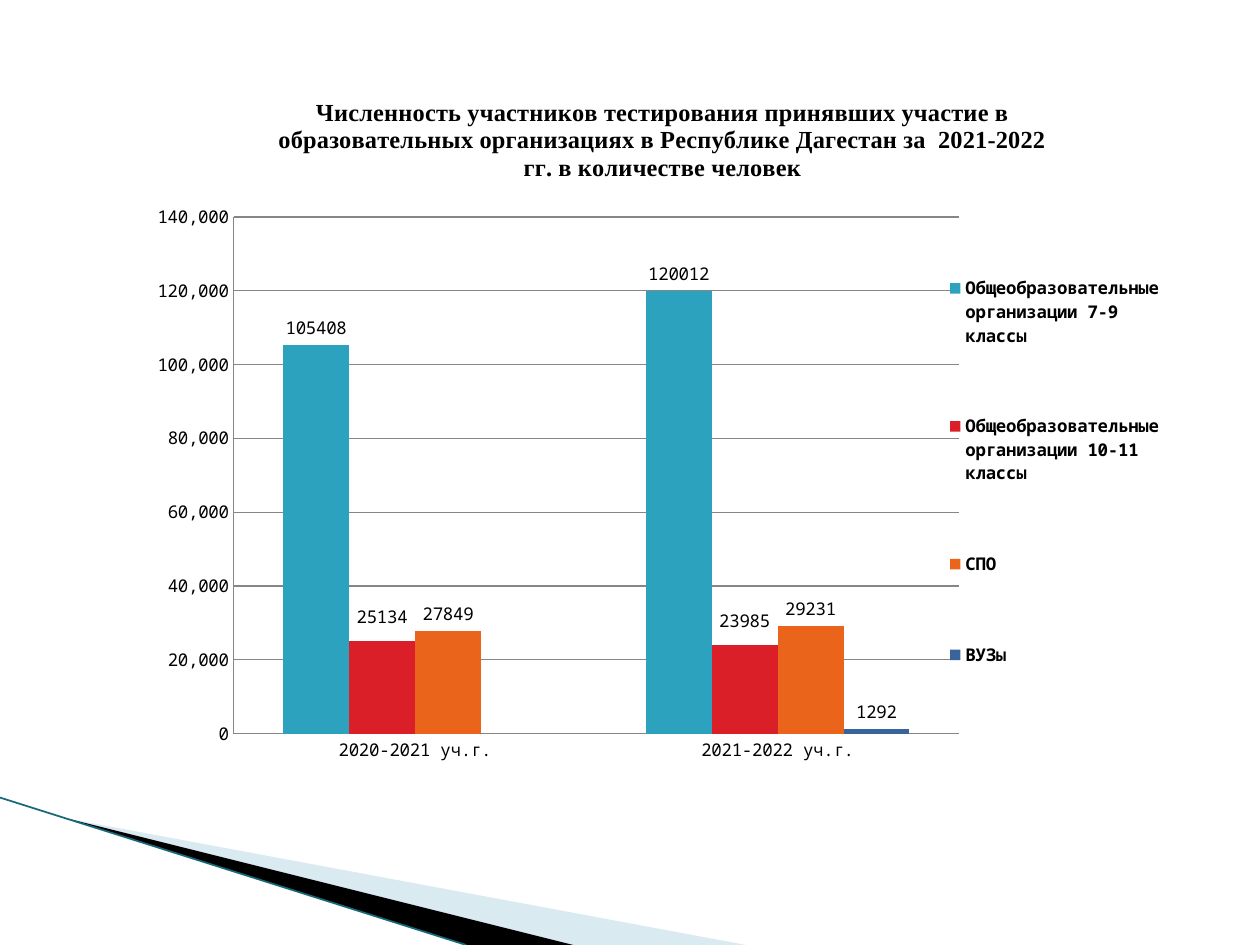
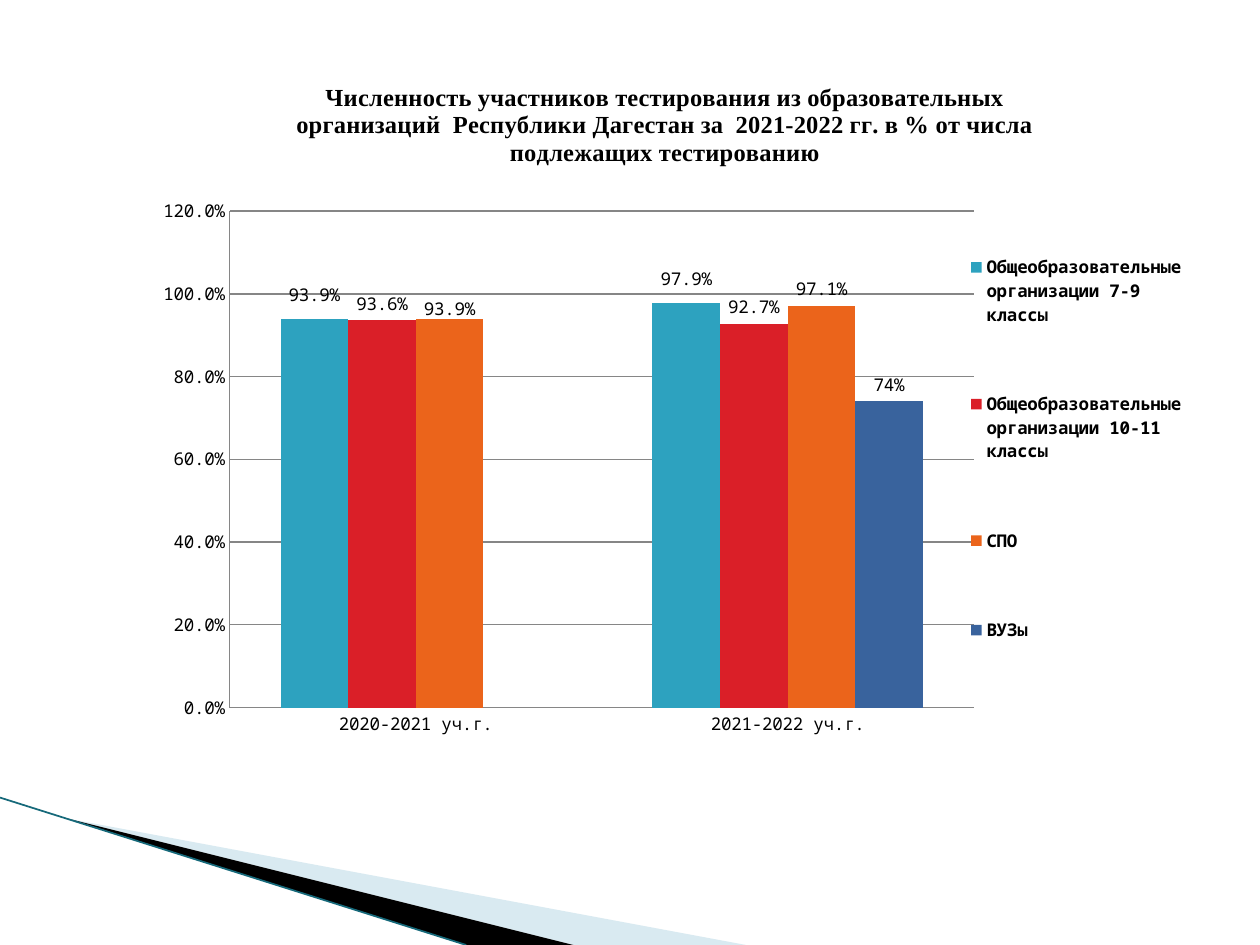
from dataclasses import dataclass

from lxml import etree
from pptx import Presentation
from pptx.chart.data import CategoryChartData
from pptx.dml.color import RGBColor
from pptx.enum.chart import XL_CHART_TYPE, XL_LABEL_POSITION, XL_LEGEND_POSITION, XL_TICK_MARK
from pptx.enum.shapes import MSO_CONNECTOR
from pptx.oxml.ns import qn
from pptx.util import Inches, Pt

COLUMNS = XL_CHART_TYPE.COLUMN_CLUSTERED
OUTSIDE = XL_LABEL_POSITION.OUTSIDE_END
RIGHT = XL_LEGEND_POSITION.RIGHT
NO_TICK = XL_TICK_MARK.NONE
STRAIGHT = MSO_CONNECTOR.STRAIGHT


@dataclass(frozen=True)
class Theme:
    ink: str = "000000"
    grid: str = "868686"
    pale: str = "A0CBDC"
    edge: str = "16697A"
    bars: tuple = ("2DA2BF", "DA1F28", "EB641B", "39639D")
    face: str = "Noto Sans Mono"
    serif: str = "Times New Roman"
    small: int = 10
    large: int = 14


THEME = Theme()
YEARS = ("2020-2021 уч.г.", "2021-2022 уч.г.")
GROUPS = (
    "Общеобразовательные организации 7-9 классы",
    "Общеобразовательные организации 10-11 классы",
    "СПО",
    "ВУЗы",
)

# Places inside a chart are shares of its box; shifts are (series, point): rise.
COUNTS = dict(
    title="Численность участников тестирования принявших участие в образовательных "
          "организациях в Республике Дагестан за  2021-2022 гг. в количестве человек",
    box=(1.25, 0.55, 8.04, 5.86),
    values=((105408, 120012), (25134, 23985), (27849, 29231), (None, 1292)),
    formats=("General",) * 4, scale="#,##0", top=140000, step=20000,
    head=(0.11, 0.03), plot=(0.07, 0.2, 0.72, 0.7), key=(0.79, 0.19, 0.21, 0.71),
    shifts={(1, 0): -0.01, (1, 1): -0.01},
)
SHARES = dict(
    title="Численность участников тестирования из образовательных организаций  "
          "Республики Дагестан за  2021-2022 гг. в % от числа подлежащих тестированию",
    box=(1.25, 0.55, 8.2, 5.63),
    values=((0.939, 0.979), (0.936, 0.927), (0.939, 0.971), (None, 0.74)),
    formats=("0.0%",) * 3 + ("0%",), scale="0.0%", top=1.2, step=0.2,
    head=(0.13, 0.01), plot=(0.07, 0.2, 0.72, 0.7), key=(0.79, 0.17, 0.21, 0.73),
    shifts={(0, 0): -0.01, (0, 1): -0.01, (2, 0): 0.01},
)


def paint(fill, shade):
    fill.solid()
    fill.fore_color.rgb = RGBColor.from_string(shade)


def style(font, size, face, bold=False):
    font.size, font.name, font.bold = Pt(size), face, bold
    font.color.rgb = RGBColor.from_string(THEME.ink)


def place(host, spot, index=1, inner=False, edge=True):
    """Give a chart part a manual layout: x, y and perhaps width, height."""
    for old in host.findall(qn("c:layout")):
        host.remove(old)
    frame = etree.Element(qn("c:layout"))
    host.insert(index, frame)
    manual = etree.SubElement(frame, qn("c:manualLayout"))
    pairs = [("layoutTarget", "inner")] if inner else []
    if edge:
        pairs += [("xMode", "edge"), ("yMode", "edge")]
    pairs += zip("xywh", spot)
    for tag, value in pairs:
        etree.SubElement(manual, qn("c:" + tag)).set("val", str(value))


def add_wedge(slide, points, shade, alpha=None):
    spots = [(Inches(x), Inches(y)) for x, y in points]
    pen = slide.shapes.build_freeform(*spots[0])
    pen.add_line_segments(spots[1:], close=True)
    wedge = pen.convert_to_shape()
    wedge.shadow.inherit = False
    wedge.line.fill.background()
    paint(wedge.fill, shade)
    if alpha:
        tone = wedge.fill._xPr.find(".//" + qn("a:srgbClr"))
        etree.SubElement(tone, qn("a:alpha")).set("val", str(alpha * 1000))


def add_sweep(slide, left, top, base):
    """Draw the corner sweep from its top-left point down to the base line."""
    tip = (left + 0.55, top + 0.17)
    add_wedge(slide, (tip, (left + 5.92, base), (left + 4.55, base)), THEME.pale, 40)
    add_wedge(slide, (tip, (left + 4.55, base), (left + 3.7, base)), THEME.ink)
    rim = slide.shapes.add_connector(
        STRAIGHT, Inches(left), Inches(top), Inches(left + 3.7), Inches(base))
    rim.line.color.rgb = RGBColor.from_string(THEME.edge)
    rim.line.width = Pt(1)
    etree.SubElement(rim._element.spPr, qn("a:effectLst"))


def style_axes(chart, view):
    rise = chart.value_axis
    rise.minimum_scale, rise.maximum_scale = 0, view["top"]
    rise.major_unit = view["step"]
    rise.has_major_gridlines = True
    rise.tick_labels.number_format = view["scale"]
    rise.tick_labels.number_format_is_linked = False
    for axis in (rise, chart.category_axis):
        axis.major_tick_mark = axis.minor_tick_mark = NO_TICK
    for part in (rise, chart.category_axis, rise.major_gridlines):
        part.format.line.color.rgb = RGBColor.from_string(THEME.grid)
        part.format.line.width = Pt(0.75)


def style_bars(chart, view):
    plot = chart.plots[0]
    plot.gap_width, plot.overlap = 150, 0
    plot.vary_by_categories = False
    for row, (bar, shade, form) in enumerate(zip(plot.series, THEME.bars, view["formats"])):
        paint(bar.format.fill, shade)
        bar.invert_if_negative = False
        labels = bar.data_labels
        labels.show_value = True
        labels.position = OUTSIDE
        labels.number_format = form
        labels.number_format_is_linked = False
        # Nudge single labels
        for (owner, point), rise in view["shifts"].items():
            if owner == row:
                bar.points[point].data_label.position = OUTSIDE
                mark = labels._element.xpath(f"c:dLbl[c:idx/@val='{point}']")[0]
                place(mark, (0, rise), edge=False)


def add_chart(slide, view):
    data = CategoryChartData()
    data.categories = YEARS
    for name, values, form in zip(GROUPS, view["values"], view["formats"]):
        data.add_series(name, values, form)
    box = [Inches(side) for side in view["box"]]
    chart = slide.shapes.add_chart(COLUMNS, *box, data).chart
    style(chart.font, THEME.small, THEME.face)
    # Title
    chart.has_title = True
    words = chart.chart_title.text_frame
    words.text = view["title"]
    style(words.paragraphs[0].runs[0].font, THEME.large, THEME.serif, True)
    # Legend
    chart.has_legend = True
    chart.legend.position = RIGHT
    chart.legend.include_in_layout = False
    style(chart.legend.font, THEME.small, THEME.face, True)
    # Axes and columns
    style_axes(chart, view)
    style_bars(chart, view)
    # Layout of the parts
    root = chart.element
    place(root.xpath("c:chart/c:title")[0], view["head"])
    place(root.xpath("c:chart/c:legend")[0], view["key"])
    place(root.xpath("c:chart/c:plotArea")[0], view["plot"], index=0, inner=True)


def main():
    deck = Presentation()
    deck.slide_width, deck.slide_height = Inches(10), Inches(7.5)
    blank = deck.slide_layouts[6]
    for view in (COUNTS, SHARES):
        slide = deck.slides.add_slide(blank)
        add_sweep(slide, 0, 6.33, 7.5)
        add_chart(slide, view)
    deck.save("out.pptx")


if __name__ == "__main__":
    main()
